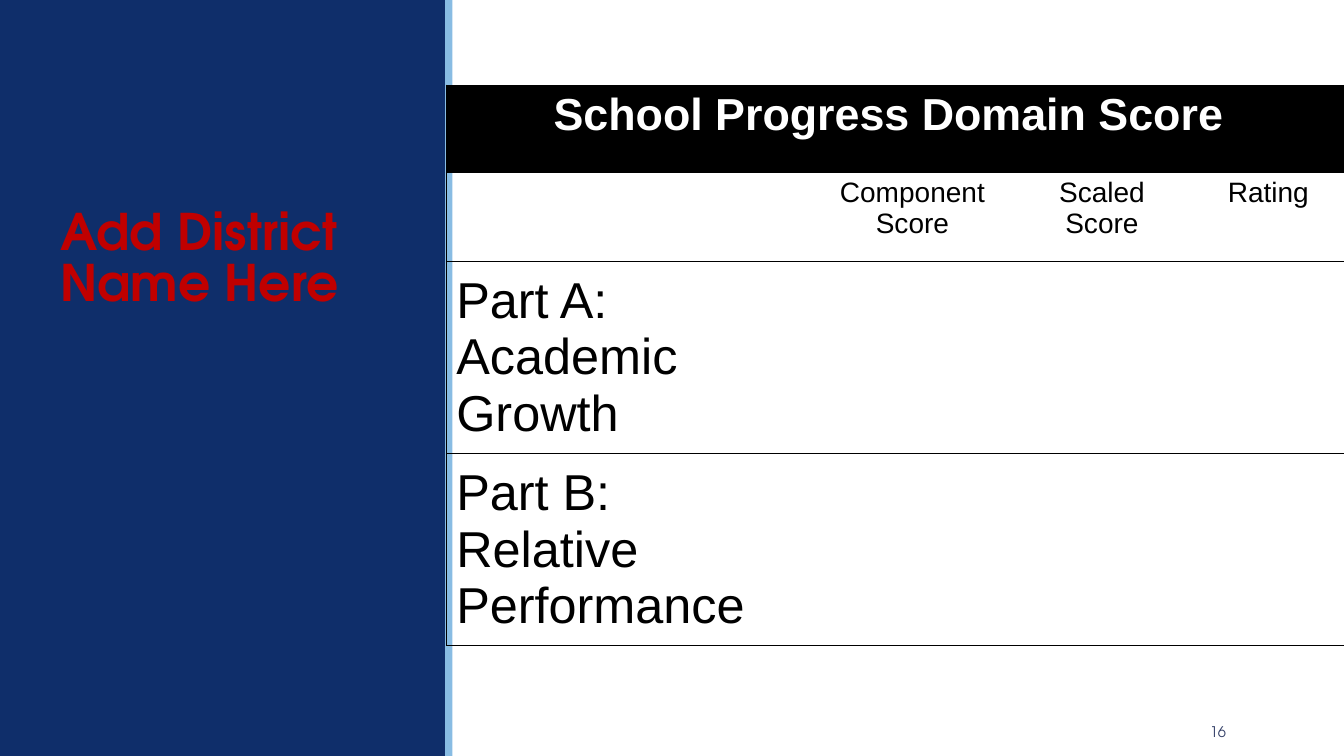
from lxml import etree
from pptx import Presentation
from pptx import util as u
from pptx.dml.color import RGBColor
from pptx.enum import shapes, text
from pptx.oxml import ns

PX = 9525
W, H = 1280, 720
NAVY, SKY, RED, SLATE = "0F2E6A", "88BCE3", "C00000", "344068"
BLACK, WHITE = "000000", "FFFFFF"
HEADING_FONT, TABLE_FONT = "TeX Gyre Adventor", "Arial"

COLUMNS = [350, 188, 173, 144]
ROWS = [83, 85, 183, 183]
TITLE = "School Progress Domain Score "
HEADINGS = ["", "Component Score", "Scaled Score", "Rating"]
PARTS = ["Part A: Academic Growth", "Part B: Relative Performance"]


def px(*lengths):
    return [u.Emu(n * PX) for n in lengths]


def rgb(color):
    return RGBColor.from_string(color)


def write(tf, words, size, color=BLACK, font=TABLE_FONT, bold=False,
          align=text.PP_ALIGN.LEFT, spacing=1.0):
    p = tf.paragraphs[0]
    p.alignment = align
    p.line_spacing = spacing
    r = p.add_run()
    r.text = words
    r.font.size = u.Pt(size)
    r.font.name = font
    r.font.bold = bold
    r.font.color.rgb = rgb(color)


def add_bar(s, box, color):
    sp = s.shapes.add_shape(shapes.MSO_SHAPE.RECTANGLE, *px(*box))
    sp.shadow.inherit = False
    sp.fill.solid()
    sp.fill.fore_color.rgb = rgb(color)
    sp.line.fill.background()


def add_text(s, box, words, size, anchor, **fmt):
    tf = s.shapes.add_textbox(*px(*box)).text_frame
    tf.word_wrap = True
    tf.vertical_anchor = anchor
    write(tf, words, size, **fmt)


def set_borders(cell, visible):
    """Draw a thin black line on the visible edges (L, R, T, B) and none on the rest."""
    tc_pr = cell._tc.get_or_add_tcPr()
    for edge in "LRTB":
        ln = etree.SubElement(tc_pr, ns.qn("a:ln" + edge), w=str(u.Pt(0.75)))
        if edge in visible:
            fill = etree.SubElement(ln, ns.qn("a:solidFill"))
            etree.SubElement(fill, ns.qn("a:srgbClr"), val=BLACK)
        else:
            etree.SubElement(ln, ns.qn("a:noFill"))


def add_side_panel(s, x, y, w, h):
    add_bar(s, (x, y, w, h), NAVY)
    add_bar(s, (x + w - 1, y, 7, h), SKY)
    add_text(s, (x + 48, y + 62, 336, 240), "Add District Name Here", 36,
             text.MSO_ANCHOR.BOTTOM, color=RED, font=HEADING_FONT, bold=True,
             spacing=0.85)


def add_score_table(s, x, y):
    box = px(x, y, sum(COLUMNS), sum(ROWS))
    table = s.shapes.add_table(len(ROWS), len(COLUMNS), *box).table
    table.first_row = table.horz_banding = False
    for column, width in zip(table.columns, px(*COLUMNS)):
        column.width = width
    for row, height in zip(table.rows, px(*ROWS)):
        row.height = height

    last = len(COLUMNS) - 1
    for i in range(len(ROWS)):
        for j in range(len(COLUMNS)):
            cell = table.cell(i, j)
            set_borders(cell, "TB" + "L" * (j == 0) + "R" * (j == last))
            if i == 0:
                cell.fill.solid()
                cell.fill.fore_color.rgb = rgb(BLACK)
            else:
                cell.fill.background()

    title = table.cell(0, 0)
    title.merge(table.cell(0, last))
    write(title.text_frame, TITLE, 32, color=WHITE, bold=True,
          align=text.PP_ALIGN.CENTER)
    for j, heading in enumerate(HEADINGS):
        if heading:
            write(table.cell(1, j).text_frame, heading, 20,
                  align=text.PP_ALIGN.CENTER)
    for i, part in enumerate(PARTS, start=2):
        cell = table.cell(i, 0)
        cell.vertical_anchor = text.MSO_ANCHOR.MIDDLE
        write(cell.text_frame, part, 36)


def add_page_number(s, x, y, w, h):
    add_text(s, (x, y, w, h), "16", 10.5, text.MSO_ANCHOR.MIDDLE, color=SLATE,
             font=HEADING_FONT, align=text.PP_ALIGN.RIGHT)


def main():
    prs = Presentation()
    prs.slide_width, prs.slide_height = px(W, H)
    s = prs.slides.add_slide(prs.slide_layouts[6])
    panel_width = W - sum(COLUMNS)
    add_side_panel(s, 0, 0, panel_width, H)
    add_page_number(s, 1040, 678, 137, 38)
    add_score_table(s, panel_width, 81)
    prs.save("out.pptx")


if __name__ == "__main__":
    main()
